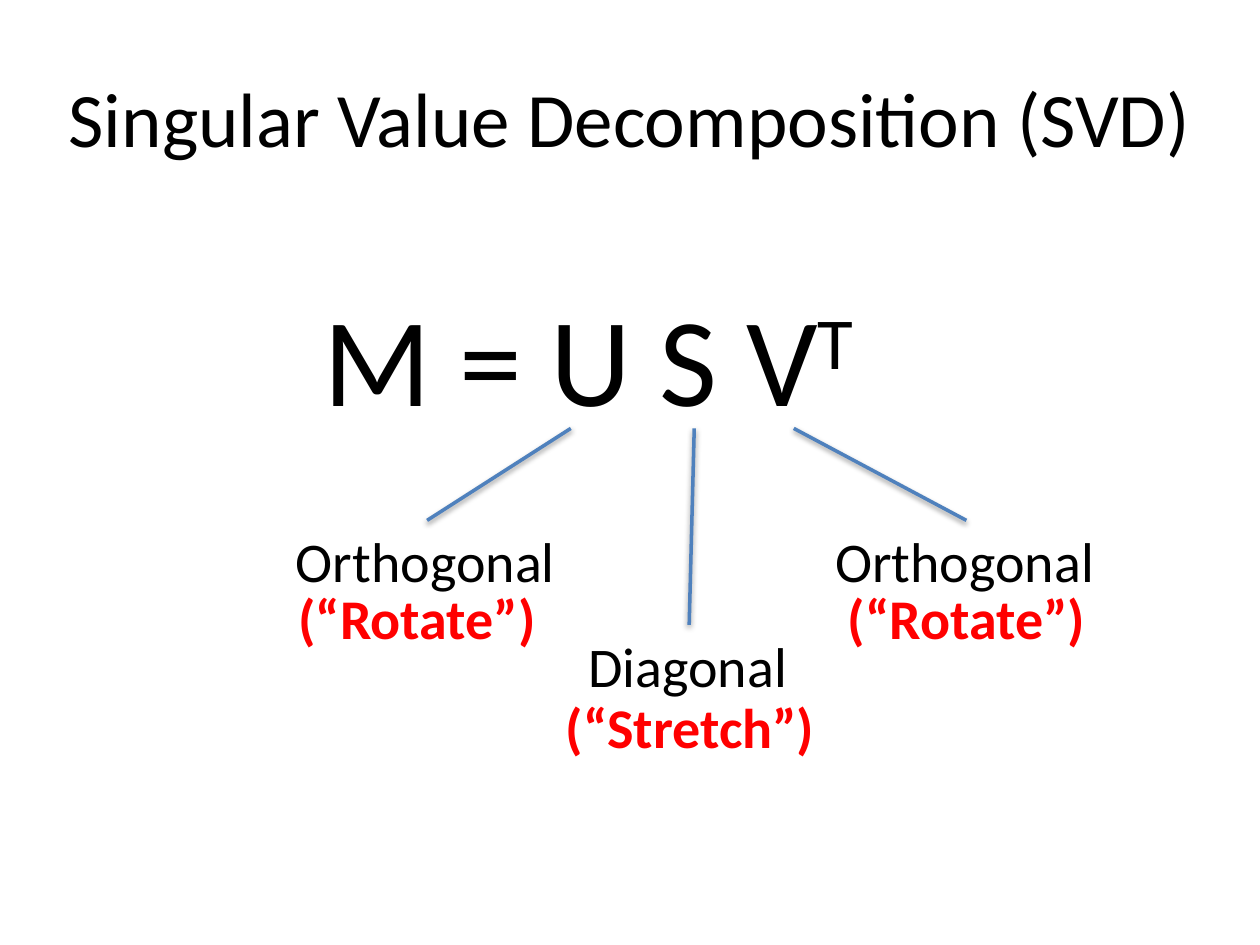
import pptx
import pptx.dml.color
import pptx.enum.shapes
import pptx.enum.text
import pptx.util

Inches = pptx.util.Inches
Pt = pptx.util.Pt
ALIGN = pptx.enum.text.PP_ALIGN
COLORS = {"text": "000000", "role": "FF0000", "line": "4F81BD"}


def color(name):
    return pptx.dml.color.RGBColor.from_string(COLORS[name])


def style(font, size, name="text", bold=False):
    font.name = "Calibri"
    font.size = Pt(size)
    font.bold = bold
    font.color.rgb = color(name)


def add_title(slide, text):
    title = slide.shapes.title
    title.left, title.top = Inches(0), Inches(0.3)
    title.width, title.height = Inches(10), Inches(1.25)
    frame = title.text_frame
    frame.text = text
    frame.vertical_anchor = pptx.enum.text.MSO_ANCHOR.MIDDLE
    para = frame.paragraphs[0]
    para.alignment = ALIGN.CENTER
    style(para.font, 44)


def add_box(slide, left, top, width, height, wrap):
    box = slide.shapes.add_textbox(
        Inches(left), Inches(top), Inches(width), Inches(height))
    box.text_frame.word_wrap = wrap
    return box.text_frame


def add_formula(slide):
    frame = add_box(slide, 0.22, 2.18, 9, 4.95, True)
    para = frame.paragraphs[0]
    para.alignment = ALIGN.CENTER
    style(para.font, 72)
    for text in ("M = U S V", "T", " "):
        run = para.add_run()
        run.text = text
        if text == "T":
            run.font._element.set("baseline", "30000")
        elif text == " ":
            run.font.size = Pt(32)


def add_label(slide, text, left, top, width, name="text", bold=False):
    frame = add_box(slide, left, top, width, 0.64, False)
    frame.auto_size = pptx.enum.text.MSO_AUTO_SIZE.SHAPE_TO_FIT_TEXT
    frame.text = text
    style(frame.paragraphs[0].font, 32, name, bold)


def add_line(slide, start, end):
    line = slide.shapes.add_connector(
        pptx.enum.shapes.MSO_CONNECTOR.STRAIGHT,
        *(Inches(value) for value in start + end))
    line.line.color.rgb = color("line")
    line.line.width = Pt(2)


def add_factor(slide, start, end, kind, role):
    add_line(slide, start, end)
    text, left, width = kind
    add_label(slide, text, left, end[1], width)
    text, left, top, width = role
    add_label(slide, text, left, top, width, "role", True)


def main():
    deck = pptx.Presentation()
    deck.slide_width, deck.slide_height = Inches(10), Inches(7.5)
    slide = deck.slides.add_slide(deck.slide_layouts[5])
    add_title(slide, "Singular Value Decomposition (SVD)")
    add_formula(slide)
    factors = [
        ((4.53, 3.4), (3.39, 4.13), ("Orthogonal", 2.25, 2.28),
         (" (“Rotate”)", 2.17, 4.58, 2.23)),
        ((6.3, 3.4), (7.67, 4.13), ("Orthogonal", 6.53, 2.28),
         (" (“Rotate”)", 6.53, 4.58, 2.23)),
        ((5.51, 3.4), (5.47, 4.96), ("Diagonal", 4.57, 1.8),
         (" (“Stretch”)", 4.29, 5.45, 2.31)),
    ]
    for factor in factors:
        add_factor(slide, *factor)
    deck.save("out.pptx")


if __name__ == "__main__":
    main()
